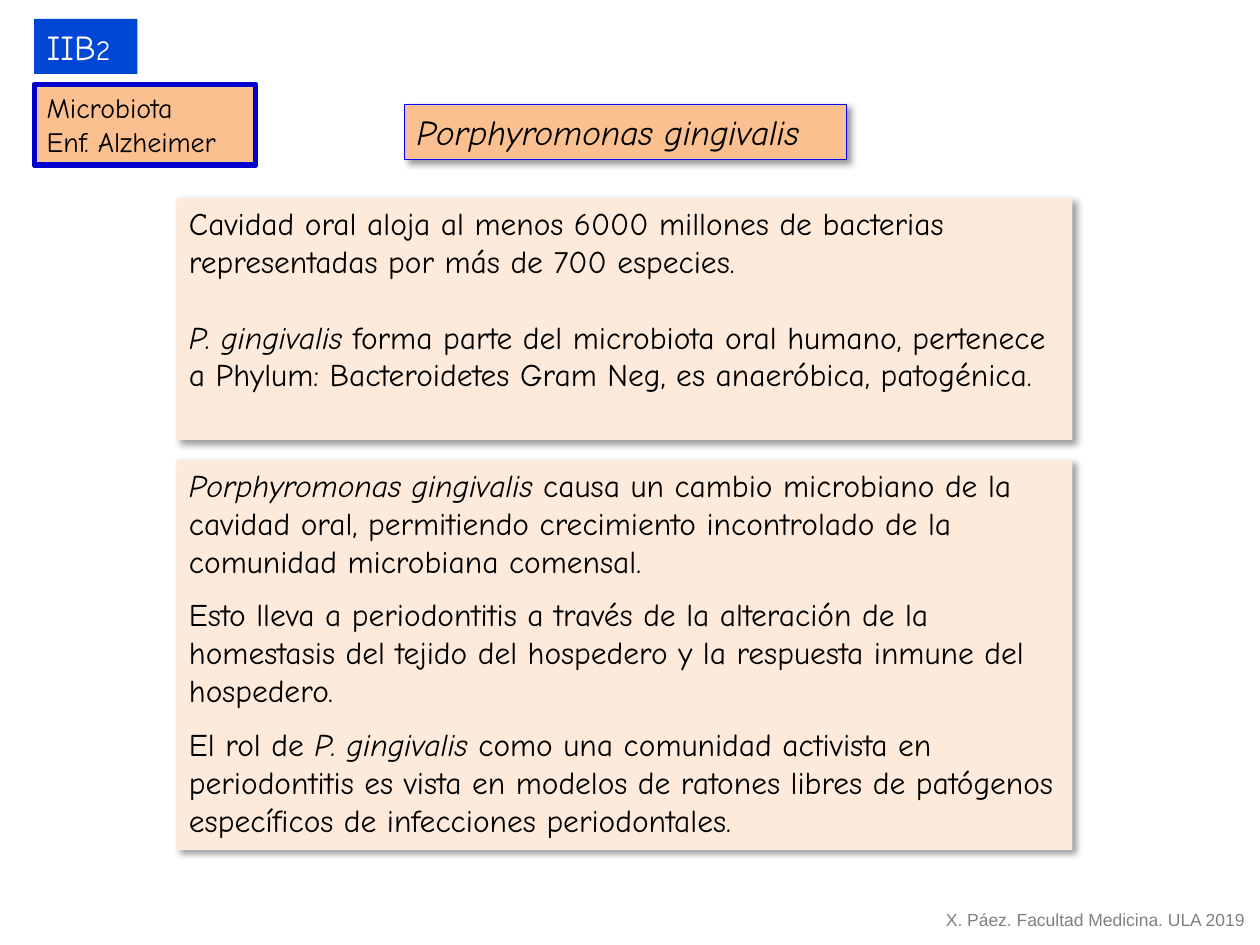
from dataclasses import dataclass

from lxml.etree import SubElement
from pptx import Presentation
from pptx.dml.color import RGBColor
from pptx.enum.shapes import MSO_SHAPE as Preset
from pptx.enum.text import MSO_ANCHOR as Anchor, PP_ALIGN as Align
from pptx.oxml.ns import qn
from pptx.util import Cm, Pt


@dataclass(frozen=True)
class Theme:
    font: str = "Comic Neue"
    footer_font: str = "Arial"
    black: str = "000000"
    white: str = "FFFFFF"
    grey: str = "808080"
    blue: str = "0047D6"
    topic_border: str = "0000CC"
    title_border: str = "0000FF"
    orange: str = "FAC090"
    cream: str = "FDEADA"
    title_size: int = 20
    body_size: int = 18
    label_size: int = 16
    footer_size: int = 10


THEME = Theme()


def add_shadow(shape):
    effects = shape._element.spPr.find(qn("a:effectLst"))
    shadow = SubElement(effects, qn("a:outerShdw"), blurRad=str(Pt(4)),
                        dist=str(Pt(3)), dir="2700000", algn="tl", rotWithShape="0")
    color = SubElement(shadow, qn("a:srgbClr"), val=THEME.black)
    SubElement(color, qn("a:alpha"), val="40000")


def add_run(paragraph, text, size, color, font=THEME.font, italic=False):
    run = paragraph.add_run()
    run.text = text
    run.font.name = font
    run.font.size = Pt(size)
    run.font.italic = italic
    run.font.color.rgb = RGBColor.from_string(color)


def add_panel(slide, box, fill, border=None, border_width=0, shadow=False):
    shape = slide.shapes.add_shape(Preset.RECTANGLE, *map(Cm, box))
    shape.shadow.inherit = False
    shape.fill.solid()
    shape.fill.fore_color.rgb = RGBColor.from_string(fill)
    if border:
        shape.line.color.rgb = RGBColor.from_string(border)
        shape.line.width = Pt(border_width)
    else:
        shape.line.fill.background()
    if shadow:
        add_shadow(shape)
    frame = shape.text_frame
    frame.word_wrap = True
    frame.vertical_anchor = Anchor.TOP
    frame.paragraphs[0].alignment = Align.LEFT
    return frame


def next_paragraph(frame, gap=0):
    paragraph = frame.add_paragraph()
    paragraph.alignment = Align.LEFT
    paragraph.space_before = Pt(gap)
    return paragraph


def add_body(slide, top, height, gap, paragraphs):
    frame = add_panel(slide, (3.56, top, 18.06, height), THEME.cream, shadow=True)
    for index, runs in enumerate(paragraphs):
        paragraph = next_paragraph(frame, gap) if index else frame.paragraphs[0]
        for text, italic in runs:
            add_run(paragraph, text, THEME.body_size, THEME.black, italic=italic)


def add_code(slide):
    frame = add_panel(slide, (0.69, 0.38, 2.08, 1.11), THEME.blue)
    paragraph = frame.paragraphs[0]
    add_run(paragraph, "IIB", THEME.title_size, THEME.white)
    add_run(paragraph, "2", THEME.label_size, THEME.white)


def add_topic(slide):
    frame = add_panel(slide, (0.69, 1.7, 4.47, 1.63), THEME.orange,
                      THEME.topic_border, 3)
    add_run(frame.paragraphs[0], "Microbiota", THEME.label_size, THEME.black)
    add_run(next_paragraph(frame), "Enf. Alzheimer", THEME.label_size, THEME.black)


def add_title(slide):
    frame = add_panel(slide, (8.15, 2.11, 8.92, 1.11), THEME.orange,
                      THEME.title_border, 0.75, shadow=True)
    add_run(frame.paragraphs[0], "Porphyromonas gingivalis", THEME.title_size,
            THEME.black, italic=True)


def add_footer(slide):
    box = map(Cm, (18.82, 18.19, 6.58, 0.69))
    frame = slide.shapes.add_textbox(*box).text_frame
    frame.word_wrap = True
    add_run(frame.paragraphs[0], "X. Páez. Facultad Medicina. ULA 2019",
            THEME.footer_size, THEME.grey, THEME.footer_font)


def main():
    presentation = Presentation()
    presentation.slide_width = Cm(25.4)
    presentation.slide_height = Cm(19.05)
    slide = presentation.slides.add_slide(presentation.slide_layouts[6])
    add_body(slide, 9.27, 7.87, 9.2, [
        [("Porphyromonas gingivalis ", True),
         ("causa un cambio microbiano de la cavidad oral, permitiendo crecimiento "
          "incontrolado de la comunidad microbiana comensal.", False)],
        [("Esto lleva a periodontitis a través de la alteración de la homestasis "
          "del tejido del hospedero y la respuesta inmune del hospedero.", False)],
        [("El rol de ", False), ("P. gingivalis ", True),
         ("como una comunidad activista en periodontitis es vista en modelos de "
          "ratones libres de patógenos específicos de infecciones periodontales.",
          False)],
    ])
    add_body(slide, 3.99, 4.88, 21.7, [
        [("Cavidad oral aloja al menos 6000 millones de bacterias representadas "
          "por más de 700 especies.", False)],
        [("P. gingivalis ", True),
         ("forma parte del microbiota oral humano, pertenece a Phylum: "
          "Bacteroidetes Gram Neg, es anaeróbica, patogénica.", False)],
    ])
    add_footer(slide)
    add_code(slide)
    add_topic(slide)
    add_title(slide)
    presentation.save("out.pptx")


if __name__ == "__main__":
    main()
